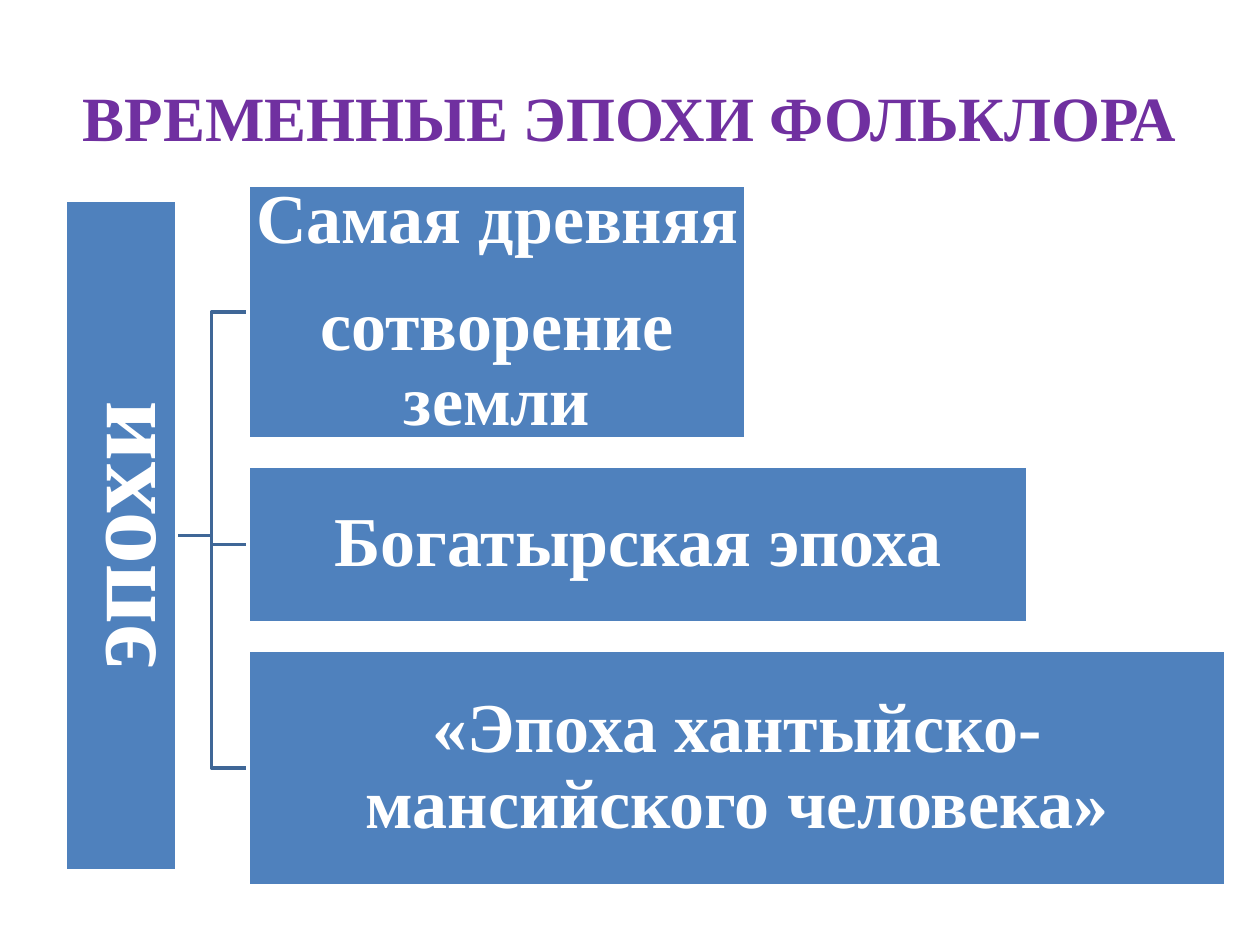
from pptx import Presentation
from pptx.dml.color import RGBColor
from pptx.enum.shapes import MSO_SHAPE as Shape
from pptx.enum.text import MSO_ANCHOR as Anchor, PP_ALIGN as Align
from pptx.util import Inches, Pt

FACE = "Times New Roman"
BLUE, EDGE, WHITE, PURPLE = "4F81BD", "3F6797", "FFFFFF", "7030A0"
LEFT, ROOT, MID = 1.97, (1.4, 4.25), 1.68
EPOCHS = [
    (1.47, 3.95, 2.01, ["Самая древняя", "сотворение земли"]),
    (3.7, 6.19, 1.24, ["Богатырская эпоха"]),
    (5.16, 7.76, 1.87, ["«Эпоха хантыйско-мансийского человека»"]),
]


def tint(color, code):
    color.rgb = RGBColor.from_string(code)


def apply(item, form):
    for key, value in form.items():
        setattr(item, key, value)


def style(para, size, code):
    para.alignment = Align.CENTER
    apply(para.font, {"name": FACE, "size": Pt(size), "bold": True})
    tint(para.font.color, code)


def stroke(shape, code):
    shape.shadow.inherit = False
    shape.line.width = Pt(2)
    tint(shape.line.color, code)


def add_title(slide, text):
    title = slide.shapes.title
    apply(title, {"left": Inches(0.5), "top": Inches(0.3),
                  "width": Inches(9), "height": Inches(1.25)})
    frame = title.text_frame
    frame.text = text
    frame.vertical_anchor = Anchor.MIDDLE
    style(frame.paragraphs[0], 36, PURPLE)


def add_link(slide, end):
    x, y = ROOT
    pen = slide.shapes.build_freeform(Inches(x), Inches(y))
    points = [(MID, y), (MID, end), (LEFT, end)]
    pen.add_line_segments([(Inches(a), Inches(b)) for a, b in points], close=False)
    link = pen.convert_to_shape()
    link.fill.background()
    stroke(link, EDGE)


def add_box(slide, place, lines, size, pad, turn=0):
    box = slide.shapes.add_shape(Shape.RECTANGLE, *map(Inches, place))
    box.rotation = turn
    box.fill.solid()
    tint(box.fill.fore_color, BLUE)
    stroke(box, WHITE)
    frame = box.text_frame
    apply(frame, {"word_wrap": True, "vertical_anchor": Anchor.MIDDLE})
    apply(frame, {f"margin_{side}": Inches(pad)
                  for side in ("left", "top", "right", "bottom")})
    frame.text = "\n".join(lines)
    for para in frame.paragraphs:
        style(para, size, WHITE)
        para.line_spacing = 0.9
    for para in frame.paragraphs[:-1]:
        para.space_after = Pt(18)


def main():
    deck = Presentation()
    apply(deck, {"slide_width": Inches(10), "slide_height": Inches(7.5)})
    slide = deck.slides.add_slide(deck.slide_layouts[5])
    add_title(slide, "ВРЕМЕННЫЕ ЭПОХИ ФОЛЬКЛОРА")
    for top, _, high, _ in reversed(EPOCHS):
        add_link(slide, top + high / 2)
    add_box(slide, (-1.7, 3.81, 5.32, 0.88), ["эпохи"], 60, 0.04, 270)
    for top, wide, high, lines in EPOCHS:
        add_box(slide, (LEFT, top, wide, high), lines, 40, 0.03)
    deck.save("out.pptx")


if __name__ == "__main__":
    main()
